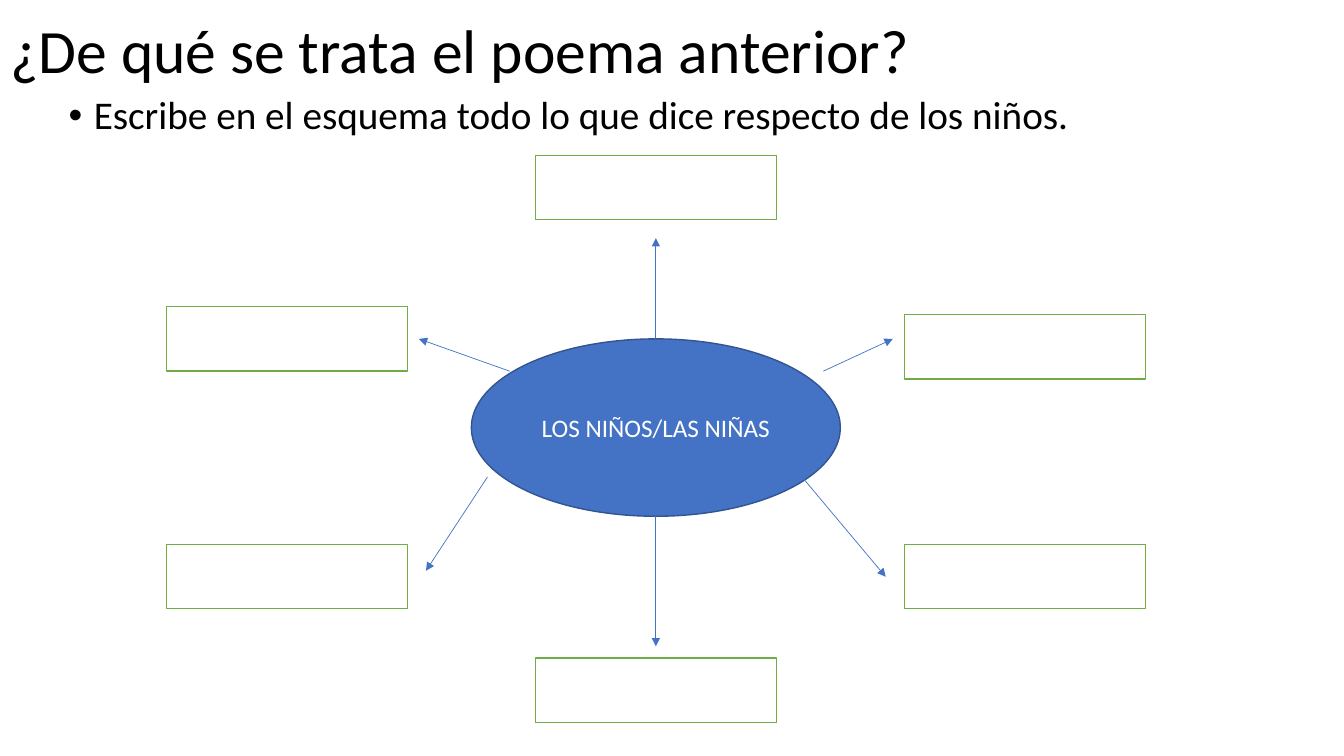
from lxml import etree
from pptx import Presentation
from pptx.dml.color import RGBColor
from pptx.enum.shapes import MSO_CONNECTOR, MSO_SHAPE
from pptx.enum.text import MSO_ANCHOR, MSO_AUTO_SIZE, PP_ALIGN
from pptx.oxml.ns import qn
from pptx.util import Inches, Pt

RECT, OVAL = MSO_SHAPE.RECTANGLE, MSO_SHAPE.OVAL
STRAIGHT = MSO_CONNECTOR.STRAIGHT
TOP, MIDDLE = MSO_ANCHOR.TOP, MSO_ANCHOR.MIDDLE
LEFT, CENTER = PP_ALIGN.LEFT, PP_ALIGN.CENTER
NO_FIT = MSO_AUTO_SIZE.NONE

WIDE, HIGH = 13.33, 7.5
FONT = "Calibri"
HUES = {"ink": "000000", "paper": "FFFFFF", "green": "70AD47",
        "blue": "4472C4", "navy": "325491"}

NODE = (2.39, 0.64)
HUB = (3.66, 1.76)
# Answer boxes: column (0 to 2) and distance below the top of the map
NODES = [(1, 0), (0, 1.5), (2, 1.58), (0, 3.86), (2, 3.86), (1, 4.99)]
# Arrows: start and end, measured from the centre of the hub
RAYS = [
    ((0, -0.88), (0, -1.88)),
    ((-1.45, -0.56), (-2.35, -0.88)),
    ((-1.67, 0.49), (-2.28, 1.42)),
    ((1.66, -0.56), (2.35, -0.88)),
    ((1.45, 0.49), (2.28, 1.48)),
    ((0, 0.88), (0, 2.17)),
]


def hue(name):
    return RGBColor.from_string(HUES[name])


def write(shape, text, size, color, align, anchor):
    frame = shape.text_frame
    frame.text = text
    frame.word_wrap = True
    frame.auto_size = NO_FIT
    frame.vertical_anchor = anchor
    para = frame.paragraphs[0]
    para.alignment = align
    font = para.runs[0].font
    font.name, font.size = FONT, Pt(size)
    font.color.rgb = hue(color)
    return para


def place(shape, box):
    shape.left, shape.top, shape.width, shape.height = map(Inches, box)


def head(slide, box):
    title = slide.shapes.title
    place(title, box)
    para = write(title, "¿De qué se trata el poema anterior?",
                 44, "ink", LEFT, MIDDLE)
    para.line_spacing = 0.9


def task(slide, box):
    body = slide.placeholders[1]
    place(body, box)
    para = write(
        body, "Escribe en el esquema todo lo que dice respecto de los niños.",
        28, "ink", LEFT, TOP)
    para.line_spacing = 0.9
    para.space_before = Pt(10)
    props = para._p.get_or_add_pPr()
    props.set("marL", str(Inches(0.25)))
    props.set("indent", str(-Inches(0.25)))
    etree.SubElement(props, qn("a:buFont")).set("typeface", "Arial")
    etree.SubElement(props, qn("a:buChar")).set("char", "•")


def block(slide, kind, box, fill, edge):
    shape = slide.shapes.add_shape(kind, *map(Inches, box))
    shape.shadow.inherit = False
    shape.fill.solid()
    shape.fill.fore_color.rgb = hue(fill)
    shape.line.color.rgb = hue(edge)
    shape.line.width = Pt(1)
    return shape


def arrow(slide, start, end):
    link = slide.shapes.add_connector(STRAIGHT, *map(Inches, start + end))
    link.line.color.rgb = hue("blue")
    link.line.width = Pt(0.5)
    tip = etree.SubElement(link.line._get_or_add_ln(), qn("a:tailEnd"))
    tip.set("type", "triangle")
    etree.SubElement(link._element.spPr, qn("a:effectLst"))


def web(slide, box):
    """Draw the hub, its answer boxes and the arrows between them."""
    left, top, width, high = box
    step = (width - NODE[0]) / 2
    for col, drop in NODES:
        block(slide, RECT, (left + col * step, top + drop, *NODE),
              "paper", "green")
    mid_x, mid_y = left + width / 2, top + 0.48 * high
    hub = block(slide, OVAL, (mid_x - HUB[0] / 2, mid_y - HUB[1] / 2, *HUB),
                "blue", "navy")
    write(hub, "LOS NIÑOS/LAS NIÑAS", 18, "paper", CENTER, MIDDLE)
    for ray in RAYS:
        start, end = [(mid_x + x, mid_y + y) for x, y in ray]
        arrow(slide, start, end)


def main():
    deck = Presentation()
    deck.slide_width, deck.slide_height = Inches(WIDE), Inches(HIGH)
    slide = deck.slides.add_slide(deck.slide_layouts[1])
    head(slide, (0, 0, 11.5, 1.07))
    task(slide, (0.58, 0.9, 11.5, 0.74))
    web(slide, (1.65, 1.54, 9.71, 5.63))
    deck.save("out.pptx")


if __name__ == "__main__":
    main()
